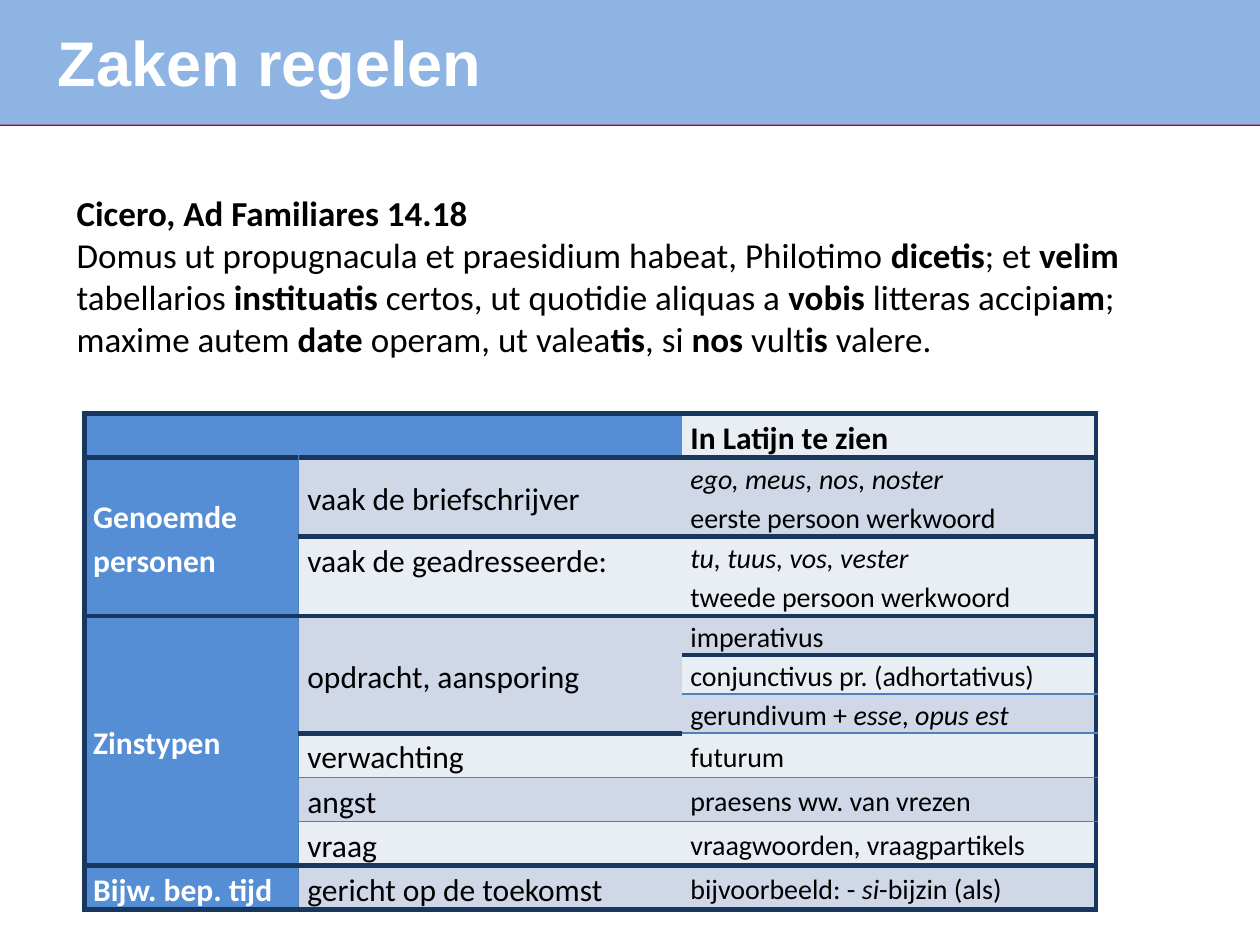
from lxml.etree import SubElement
from pptx import Presentation
from pptx.dml.color import RGBColor
from pptx.enum.shapes import MSO_CONNECTOR, MSO_SHAPE
from pptx.enum.text import MSO_ANCHOR, PP_ALIGN
from pptx.oxml import parse_xml
from pptx.oxml.ns import qn
from pptx.util import Inches, Pt

NAVY, BLUE, HEADER = "17375E", "4F81BD", "558ED5"
DARK_BAND, LIGHT_BAND = "D0D8E8", "E9EDF4"
THICK, THIN = (3, NAVY), (1, BLUE)
A_NS = "http://schemas.openxmlformats.org/drawingml/2006/main"


def write(paragraph, marked, size, color="000000", bold=False, accent="bold", font="Calibri"):
    """Write text in which each stretch between asterisks gets the accent."""
    for index, part in enumerate(marked.split("*")):
        if not part:
            continue
        run = paragraph.add_run()
        run.text = part
        run.font.name, run.font.size, run.font.bold = font, Pt(size), bold
        run.font.color.rgb = RGBColor.from_string(color)
        if index % 2:
            setattr(run.font, accent, True)


def set_borders(cell, left, right, top, bottom):
    properties = cell._tc.get_or_add_tcPr()
    for index, (side, border) in enumerate(zip("LRTB", (left, right, top, bottom))):
        if border:
            width, color = border
            paint = f'<a:solidFill><a:srgbClr val="{color}"/></a:solidFill>'
        else:
            width, paint = 0, "<a:noFill/>"
        properties.insert(index, parse_xml(
            f'<a:ln{side} xmlns:a="{A_NS}" w="{Pt(width)}">{paint}</a:ln{side}>'))


prs = Presentation()
prs.slide_width, prs.slide_height = Inches(10), Inches(7.5)
slide = prs.slides.add_slide(prs.slide_layouts[5])

# Title band
band_height = Inches(0.99)
title = slide.shapes.title
band = slide.shapes.add_shape(MSO_SHAPE.RECTANGLE, 0, 0, prs.slide_width, band_height)
band.shadow.inherit = False
band.fill.solid()
band.fill.fore_color.rgb = RGBColor.from_string("8EB4E3")
band.line.fill.background()
rule = slide.shapes.add_connector(MSO_CONNECTOR.STRAIGHT, 0, band_height, prs.slide_width, band_height)
rule.line.color.rgb = RGBColor.from_string("C00000")
rule.line.width = Pt(2)
SubElement(rule.element.spPr, qn("a:effectLst"))
title.element.addprevious(rule.element)
title.element.addprevious(band.element)

title.left, title.top, title.width, title.height = (Inches(n) for n in (0.36, 0.13, 9.13, 0.71))
title.text_frame.vertical_anchor = MSO_ANCHOR.MIDDLE
heading = title.text_frame.paragraphs[0]
heading.alignment = PP_ALIGN.LEFT
write(heading, "Zaken regelen", 36, "FFFFFF", bold=True, font="Arial")

# Latin passage
passage = slide.shapes.add_textbox(*(Inches(n) for n in (0.51, 1.47, 8.74, 1.45))).text_frame
passage.word_wrap = True
write(passage.paragraphs[0], "Cicero, Ad Familiares 14.18", 20, bold=True)
write(passage.add_paragraph(),
      "Domus ut propugnacula et praesidium habeat, Philotimo *dicetis*; et *velim *"
      "tabellarios *instituatis *certos, ut quotidie aliquas a *vobis *litteras accipi*am*; "
      "maxime autem *date *operam, ut valea*tis*, si *nos *vult*is* valere.", 20)

# Overview table: (row, column, rows spanned, columns spanned, lines)
entries = [
    (0, 0, 1, 2, []),
    (0, 2, 1, 1, ["In Latijn te zien"]),
    (1, 0, 2, 1, ["Genoemde personen"]),
    (1, 1, 1, 1, ["vaak de briefschrijver"]),
    (1, 2, 1, 1, ["*ego, meus, nos, noster*", "eerste persoon werkwoord"]),
    (2, 1, 1, 1, ["vaak de geadresseerde:"]),
    (2, 2, 1, 1, ["*tu, tuus, vos, vester*", "tweede persoon werkwoord"]),
    (3, 0, 6, 1, ["Zinstypen"]),
    (3, 1, 3, 1, ["opdracht, aansporing"]),
    (3, 2, 1, 1, ["imperativus"]),
    (4, 2, 1, 1, ["conjunctivus pr. (adhortativus)"]),
    (5, 2, 1, 1, ["gerundivum + *esse*, *opus est*"]),
    (6, 1, 1, 1, ["verwachting"]),
    (6, 2, 1, 1, ["futurum"]),
    (7, 1, 1, 1, ["angst"]),
    (7, 2, 1, 1, ["praesens ww. van vrezen"]),
    (8, 1, 1, 1, ["vraag"]),
    (8, 2, 1, 1, ["vraagwoorden, vraagpartikels"]),
    (9, 0, 1, 1, ["Bijw. bep. tijd"]),
    (9, 1, 1, 1, ["gericht op de toekomst"]),
    (9, 2, 1, 1, ["bijvoorbeeld: - *si*-bijzin (als)"]),
]
column_widths = [1.7, 3.04, 3.29]
row_heights = [0.35] + [0.63] * 2 + [0.31] * 3 + [0.35] * 4
section_edges = {0, 1, 2, 3, 9, 10}
extra_thick_edges = {(6, 1), (4, 2)}

table = slide.shapes.add_table(
    len(row_heights), len(column_widths), Inches(0.67), Inches(3.28),
    Inches(sum(column_widths)), Inches(sum(row_heights))).table
table.first_row = table.horz_banding = False
for column, width in zip(table.columns, column_widths):
    column.width = Inches(width)
for row, height in zip(table.rows, row_heights):
    row.height = Inches(height)

for row, col, row_span, col_span, lines in entries:
    end_row, end_col = row + row_span, col + col_span
    cell = table.cell(row, col)
    if row_span * col_span > 1:
        cell.merge(table.cell(end_row - 1, end_col - 1))
    is_header = col == 0
    top, bottom = (THICK if edge in section_edges or (edge, col) in extra_thick_edges else THIN
                   for edge in (row, end_row))
    left = THICK if col == 0 else THIN if col == 1 else None
    right = THICK if end_col == 3 else THIN if end_col == 1 else None
    fill = HEADER if is_header else DARK_BAND if row % 2 else LIGHT_BAND

    for r in range(row, end_row):
        for c in range(col, end_col):
            part = table.cell(r, c)
            part.margin_left = part.margin_right = Inches(0.07)
            part.margin_top = part.margin_bottom = 0
            part.fill.solid()
            part.fill.fore_color.rgb = RGBColor.from_string(fill)
            set_borders(part, left if c == col else None, right if c == end_col - 1 else None,
                        top if r == row else None, bottom if r == end_row - 1 else None)

    top_aligned = row in (0, 2) or len(lines) > 1
    cell.vertical_anchor = MSO_ANCHOR.TOP if top_aligned else MSO_ANCHOR.MIDDLE
    for index, line in enumerate(lines):
        paragraph = cell.text_frame.add_paragraph() if index else cell.text_frame.paragraphs[0]
        paragraph.line_spacing = 1.15
        write(paragraph, line, 16 if col == 2 and row else 18,
              "FFFFFF" if is_header else "000000", bold=is_header or row == 0, accent="italic")

prs.save("out.pptx")
